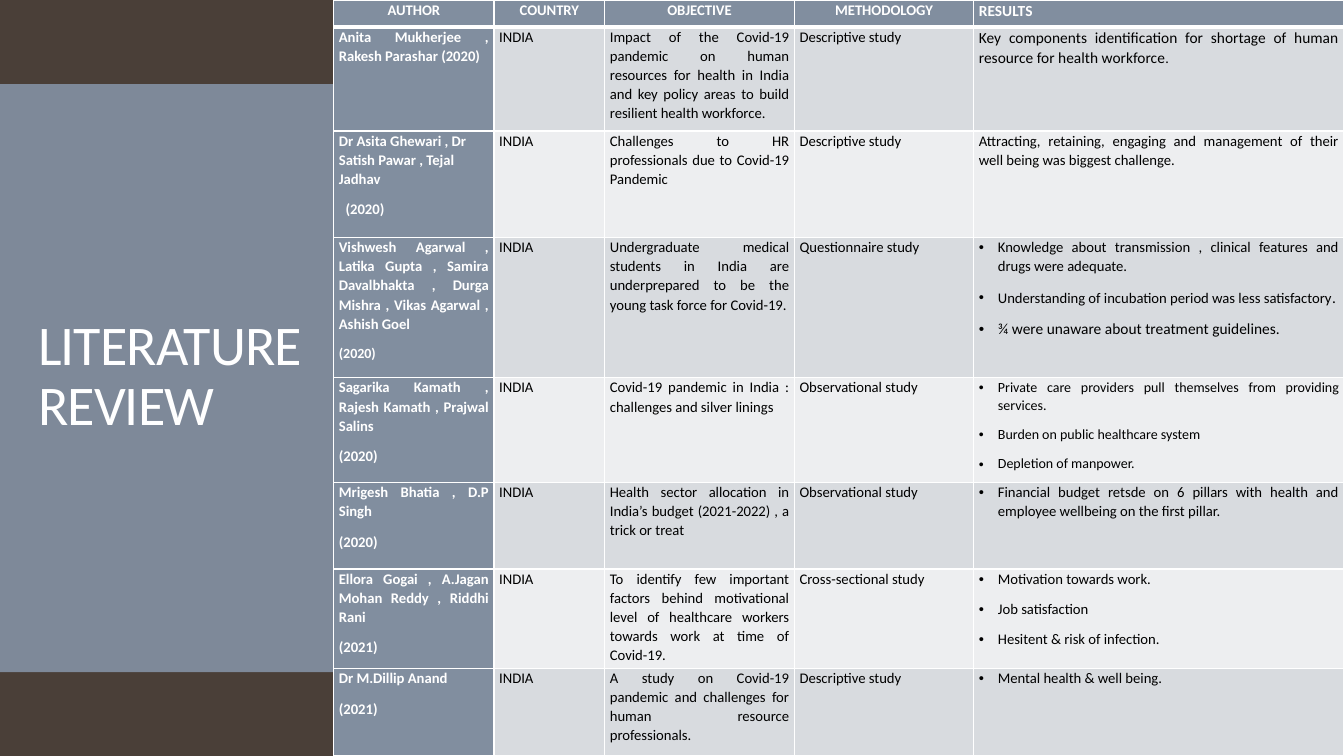
"""Builds a literature review slide with a title band and a table of studies."""
from dataclasses import dataclass

from lxml import etree
from pptx import Presentation
from pptx.dml.color import RGBColor
from pptx.enum import shapes, text
from pptx.oxml import ns
from pptx.util import Cm, Pt


@dataclass(frozen=True)
class Theme:
    font: str = "Calibri"
    backdrop: str = "4A3F38"
    slate: str = "818E9F"
    odd_row: str = "D8DBDF"
    even_row: str = "EDEEF0"
    white: str = "FFFFFF"
    black: str = "000000"
    title: float = 40
    large: float = 11
    body: float = 10.5
    small: float = 10
    rule: float = 1
    header_rule: float = 3


THEME = Theme()
LEFT, CENTER, JUSTIFY = text.PP_ALIGN.LEFT, text.PP_ALIGN.CENTER, text.PP_ALIGN.JUSTIFY


@dataclass(frozen=True)
class Para:
    text: str
    size: float = THEME.body
    align: text.PP_ALIGN = JUSTIFY
    bullet: bool = False
    indent: float = 0
    tail: str = ""
    tail_size: float = THEME.body


@dataclass(frozen=True)
class Study:
    height: float
    authors: list[Para]
    objective: str
    method: str
    results: list[Para]
    country: str = "INDIA"


@dataclass(frozen=True)
class Column:
    heading: Para
    width: float


def bullets(*items: str, size: float = THEME.body) -> list[Para]:
    """Return one bulleted paragraph per item."""
    return [Para(item, size, bullet=True) for item in items]


COLUMNS = [
    Column(Para("AUTHOR", align=CENTER), 4.04),
    Column(Para("COUNTRY", align=CENTER), 2.79),
    Column(Para("OBJECTIVE", align=CENTER), 4.78),
    Column(Para("METHODOLOGY", align=CENTER), 4.52),
    Column(Para("RESULTS", THEME.large), 9.33),
]
HEADER_HEIGHT = 0.68
STUDIES = [
    Study(2.62, [Para("Anita Mukherjee , Rakesh Parashar (2020)")],
          "Impact of the Covid-19 pandemic on human resources for health in India "
          "and key policy areas to build resilient health workforce.",
          "Descriptive study",
          [Para("Key components identification for shortage of human resource for health workforce",
                THEME.large, tail=".", tail_size=THEME.small)]),
    Study(2.69, [Para("Dr Asita Ghewari , Dr Satish Pawar , Tejal Jadhav", align=LEFT),
                 Para("(2020)", align=LEFT, indent=0.17)],
          "Challenges to HR professionals due to Covid-19 Pandemic",
          "Descriptive study",
          [Para("Attracting, retaining, engaging and management of their well being "
                "was biggest challenge.")]),
    Study(3.53, [Para("Vishwesh Agarwal , Latika Gupta , Samira Davalbhakta , Durga Mishra , "
                      "Vikas Agarwal , Ashish Goel"),
                 Para("(2020)", THEME.small)],
          "Undergraduate medical students in India are underprepared to be the young "
          "task force for Covid-19.",
          "Questionnaire study",
          [*bullets("Knowledge about transmission , clinical features and drugs were adequate."),
           Para("Understanding of incubation period was less satisfactory", bullet=True,
                tail=".", tail_size=THEME.large),
           *bullets("¾ were unaware about treatment guidelines.", size=THEME.large)]),
    Study(2.64, [Para("Sagarika Kamath , Rajesh Kamath , Prajwal Salins"), Para("(2020)")],
          "Covid-19 pandemic in India : challenges and silver linings",
          "Observational study",
          bullets("Private care providers pull themselves from providing services.",
                  "Burden on public healthcare system", "Depletion of manpower.",
                  size=THEME.small)),
    Study(2.18, [Para("Mrigesh Bhatia , D.P Singh"), Para("(2020)")],
          "Health sector allocation in India’s budget (2021-2022) , a trick or treat",
          "Observational study",
          bullets("Financial budget retsde on 6 pillars with health and employee wellbeing "
                  "on the first pillar.")),
    Study(2.51, [Para("Ellora Gogai , A.Jagan Mohan Reddy , Riddhi Rani"), Para("(2021)")],
          "To identify few important factors behind motivational level of healthcare workers "
          "towards work at time of Covid-19.",
          "Cross-sectional study",
          bullets("Motivation towards work.", "Job satisfaction",
                  "Hesitent & risk of infection.")),
    Study(2.2, [Para("Dr M.Dillip Anand", align=LEFT), Para("(2021)", align=LEFT)],
          "A study on Covid-19 pandemic and challenges for human resource professionals.",
          "Descriptive study",
          bullets("Mental health & well being.")),
]


def style_font(font, size: float, color: str, bold: bool = False) -> None:
    """Apply the theme typeface with the given size, colour and weight."""
    font.name, font.size, font.bold = THEME.font, Pt(size), bold
    font.color.rgb = RGBColor.from_string(color)


def add_child(parent, tag: str, **attrs: str):
    """Append a DrawingML element and return it."""
    return etree.SubElement(parent, ns.qn(tag), attrs)


def write_para(p, para: Para, color: str, bold: bool) -> None:
    """Fill a table paragraph with its text, spacing and bullet."""
    p.alignment, p.line_spacing, p.space_after = para.align, 1.07, Pt(8)
    pPr = p._p.get_or_add_pPr()
    if para.bullet:
        pPr.set("marL", str(Cm(0.48)))
        pPr.set("indent", str(Cm(-0.48)))
        add_child(pPr, "a:buFont", typeface="Arial")
        add_child(pPr, "a:buChar", char="•")
    elif para.indent:
        pPr.set("marL", str(Cm(para.indent)))
    style_font(p.font, para.size, color, bold)
    p.add_run().text = para.text
    if para.tail:
        r = p.add_run()
        r.text, r.font.size = para.tail, Pt(para.tail_size)


def fill_cell(cell, paras: list[Para], row: int, strong: bool) -> None:
    """Draw the borders, fill and paragraphs of one table cell."""
    cell.margin_left = cell.margin_right = Cm(0.13)
    cell.margin_top = cell.margin_bottom = 0
    tcPr = cell._tc.get_or_add_tcPr()
    for side in "LRTB":
        under_header = (row, side) in ((0, "B"), (1, "T"))
        width = THEME.header_rule if under_header else THEME.rule
        ln = add_child(tcPr, f"a:ln{side}", w=str(Pt(width)))
        add_child(add_child(ln, "a:solidFill"), "a:srgbClr", val=THEME.white)
    band = THEME.odd_row if row % 2 else THEME.even_row
    cell.fill.solid()
    cell.fill.fore_color.rgb = RGBColor.from_string(THEME.slate if strong else band)
    tf = cell.text_frame
    for i, para in enumerate(paras):
        p = tf.add_paragraph() if i else tf.paragraphs[0]
        write_para(p, para, THEME.white if strong else THEME.black, strong)


def add_title(slide) -> None:
    """Draw the translucent band and the title on it."""
    sp = slide.shapes.add_shape(shapes.MSO_SHAPE.RECTANGLE, 0, Cm(2.12), Cm(9.58), Cm(14.82))
    sp.shadow.inherit = False
    sp.fill.solid()
    sp.fill.fore_color.rgb = RGBColor.from_string(THEME.slate)
    sp.line.fill.background()
    add_child(sp.fill._xPr.find(".//" + ns.qn("a:srgbClr")), "a:alpha", val="95000")
    tf = slide.shapes.add_textbox(Cm(0.71), Cm(3.12), Cm(8.18), Cm(12.78)).text_frame
    tf.word_wrap, tf.vertical_anchor = True, text.MSO_ANCHOR.MIDDLE
    p = tf.paragraphs[0]
    p.line_spacing = 0.9
    style_font(p.font, THEME.title, THEME.white)
    r = p.add_run()
    r.text = "LITERATURE REVIEW"
    r._r.get_or_add_rPr().set("spc", "-60")


def add_studies(slide) -> None:
    """Draw the table of reviewed studies."""
    heights = [HEADER_HEIGHT] + [study.height for study in STUDIES]
    widths = [column.width for column in COLUMNS]
    table = slide.shapes.add_table(len(heights), len(widths), Cm(8.41), 0,
                                   Cm(sum(widths)), Cm(sum(heights))).table
    table.first_col, table.horz_banding = True, False
    for column, width in zip(table.columns, widths):
        column.width = Cm(width)
    grid = [[[column.heading] for column in COLUMNS]]
    grid += [[s.authors, [Para(s.country)], [Para(s.objective)], [Para(s.method)], s.results]
             for s in STUDIES]
    for i, (height, cells) in enumerate(zip(heights, grid)):
        table.rows[i].height = Cm(height)
        for j, paras in enumerate(cells):
            fill_cell(table.cell(i, j), paras, i, strong=i == 0 or j == 0)


def main() -> None:
    """Build and save the slide."""
    prs = Presentation()
    prs.slide_width, prs.slide_height = Cm(33.87), Cm(19.05)
    slide = prs.slides.add_slide(prs.slide_layouts[6])
    slide.background.fill.solid()
    slide.background.fill.fore_color.rgb = RGBColor.from_string(THEME.backdrop)
    add_title(slide)
    add_studies(slide)
    prs.save("out.pptx")


if __name__ == "__main__":
    main()
